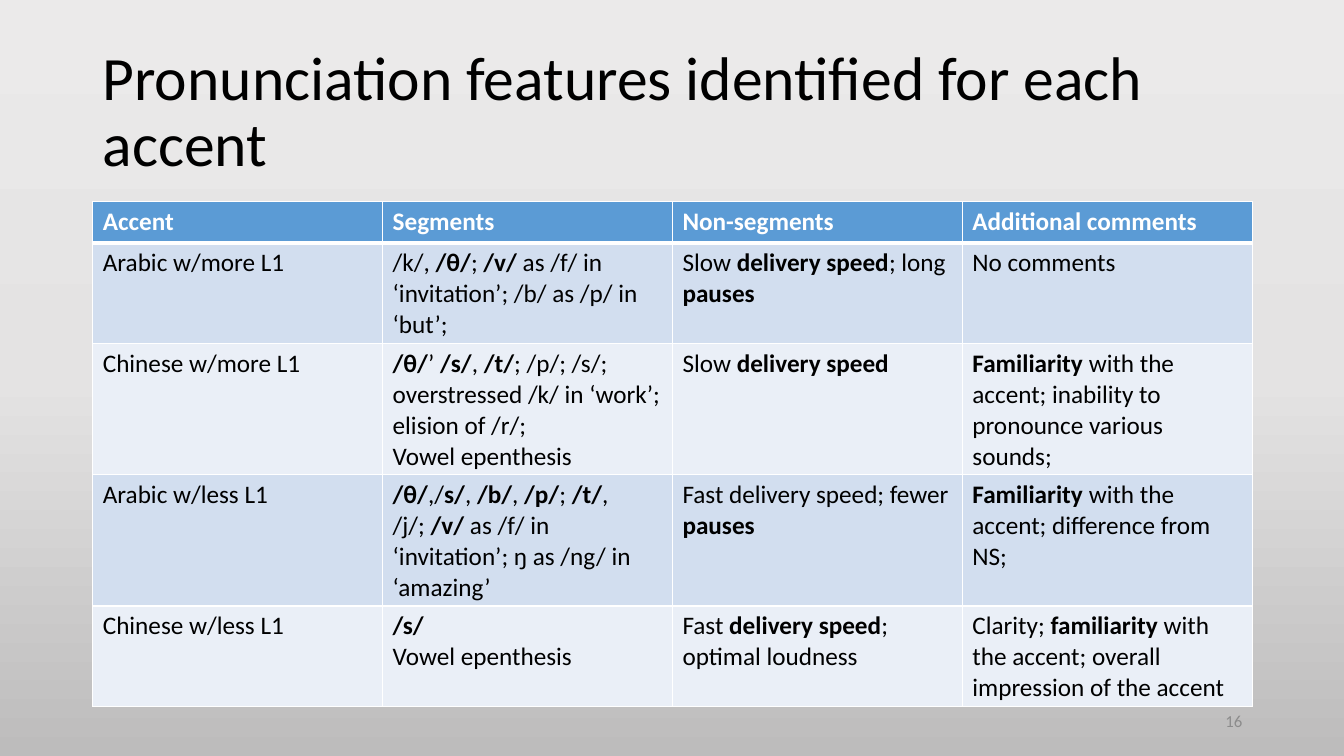
from copy import deepcopy
from dataclasses import dataclass

from lxml import etree
from pptx import Presentation, util as u
from pptx.dml.color import RGBColor
from pptx.enum import text
from pptx.oxml import ns


@dataclass(frozen=True)
class Theme:
    font: str = "Calibri"
    title_size: int = 44
    table_size: int = 18
    number_size: int = 12
    ink: str = "000000"
    white: str = "FFFFFF"
    muted: str = "8C8C8C"
    header: str = "5B9BD5"
    bands: tuple = ("D2DEEF", "EAEFF7")
    backdrop: tuple = ((0, "EBEAEA"), (0.5, "E4E3E3"), (1, "BDBCBC"))
    rule: int = 1
    header_rule: int = 3


THEME = Theme()
WIDTH, HEIGHT = 13.33, 7.5
LEFT, CONTENT_WIDTH = 0.92, 11.5
ROW_HEIGHT = 0.41

HEADINGS = ("Accent", "Segments", "Non-segments", "Additional comments")
ACCENTS = (
    (
        "Arabic w/more L1",
        "/k/, **/θ/**; **/v/** as /f/ in ‘invitation’; /b/ as /p/ in ‘but’;",
        "Slow **delivery speed**; long **pauses**",
        "No comments",
    ),
    (
        "Chinese w/more L1",
        "**/θ/**’ **/s/**, **/t/**; /p/; /s/; overstressed /k/ in ‘work’; "
        "elision of /r/;\nVowel epenthesis",
        "Slow **delivery speed**",
        "**Familiarity **with the accent; inability to pronounce various sounds;",
    ),
    (
        "Arabic w/less L1",
        "**/θ/**,/**s/**, **/b/**, **/p/**; **/t/**, /j/; **/v/ **as /f/ in "
        "‘invitation’; ŋ as /ng/ in ‘amazing’",
        "Fast delivery speed; fewer **pauses**",
        "**Familiarity** with the accent; difference from NS;",
    ),
    (
        "Chinese w/less L1",
        "**/s/**\nVowel epenthesis",
        "Fast **delivery speed**; optimal loudness",
        "Clarity; **familiarity** with the accent; overall impression of the accent",
    ),
)


def style(para, size, color, bold=None):
    para.font.name = THEME.font
    para.font.size = u.Pt(size)
    para.font.color.rgb = RGBColor.from_string(color)
    para.font.bold = bold


def write_marked(frame, marked, color, bold=None):
    for index, line in enumerate(marked.split("\n")):
        para = frame.paragraphs[0] if index == 0 else frame.add_paragraph()
        style(para, THEME.table_size, color, bold)
        for part, words in enumerate(line.split("**")):
            if words:
                span = para.add_run()
                span.text = words
                if part % 2:
                    span.font.bold = True


def add_label(page, box, words, size, color):
    label = page.shapes.add_textbox(*map(u.Inches, box))
    frame = label.text_frame
    frame.word_wrap = True
    frame.vertical_anchor = text.MSO_ANCHOR.MIDDLE
    para = frame.paragraphs[0]
    para.text = words
    style(para, size, color)
    return para


def set_borders(cell, top, bottom):
    properties = cell._tc.get_or_add_tcPr()
    sides = {"lnL": THEME.rule, "lnR": THEME.rule, "lnT": top, "lnB": bottom}
    for side, points in sides.items():
        line = etree.SubElement(properties, ns.qn("a:" + side), w=str(u.Pt(points)))
        fill = etree.SubElement(line, ns.qn("a:solidFill"))
        etree.SubElement(fill, ns.qn("a:srgbClr"), val=THEME.white)


def paint_background(page):
    fill = page.background.fill
    fill.gradient()
    fill.gradient_angle = 270
    stops = page._element.find(".//" + ns.qn("a:gsLst"))
    stops.insert(1, deepcopy(stops[0]))
    for stop, (position, color) in zip(fill.gradient_stops, THEME.backdrop):
        stop.position = position
        stop.color.rgb = RGBColor.from_string(color)


def add_title(page, box):
    title = "Pronunciation features identified for each accent"
    para = add_label(page, box, title, THEME.title_size, THEME.ink)
    para.line_spacing = 0.9


def add_accent_table(page, box):
    rows = (HEADINGS, *ACCENTS)
    grid = page.shapes.add_table(len(rows), len(HEADINGS), *map(u.Inches, box)).table
    for row, entries in enumerate(rows):
        header = row == 0
        color = THEME.white if header else THEME.ink
        shade = THEME.header if header else THEME.bands[(row - 1) % 2]
        top = THEME.header_rule if row == 1 else THEME.rule
        bottom = THEME.header_rule if header else THEME.rule
        for column, marked in enumerate(entries):
            cell = grid.cell(row, column)
            set_borders(cell, top, bottom)
            cell.fill.solid()
            cell.fill.fore_color.rgb = RGBColor.from_string(shade)
            write_marked(cell.text_frame, marked, color, header)


def add_page_number(page, box):
    para = add_label(page, box, "16", THEME.number_size, THEME.muted)
    para.alignment = text.PP_ALIGN.RIGHT


def main():
    deck = Presentation()
    deck.slide_width, deck.slide_height = u.Inches(WIDTH), u.Inches(HEIGHT)
    page = deck.slides.add_slide(deck.slide_layouts[6])
    paint_background(page)
    add_title(page, (LEFT, 0.4, CONTENT_WIDTH, 1.45))
    table_height = ROW_HEIGHT * (len(ACCENTS) + 1)
    add_accent_table(page, (LEFT, 2, CONTENT_WIDTH, table_height))
    number_width = 3
    number_left = LEFT + CONTENT_WIDTH - number_width
    add_page_number(page, (number_left, 6.95, number_width, 0.4))
    deck.save("out.pptx")


if __name__ == "__main__":
    main()
